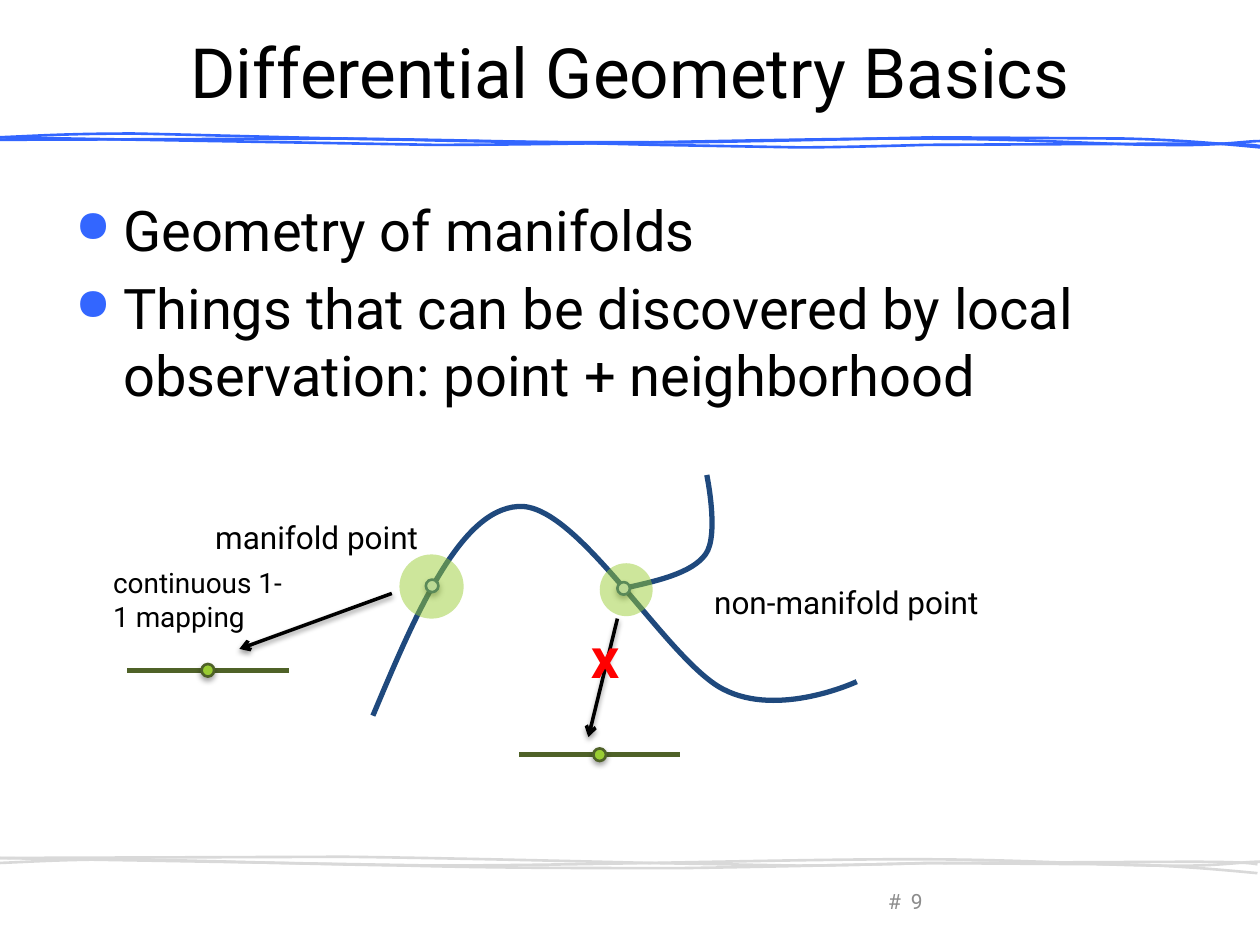
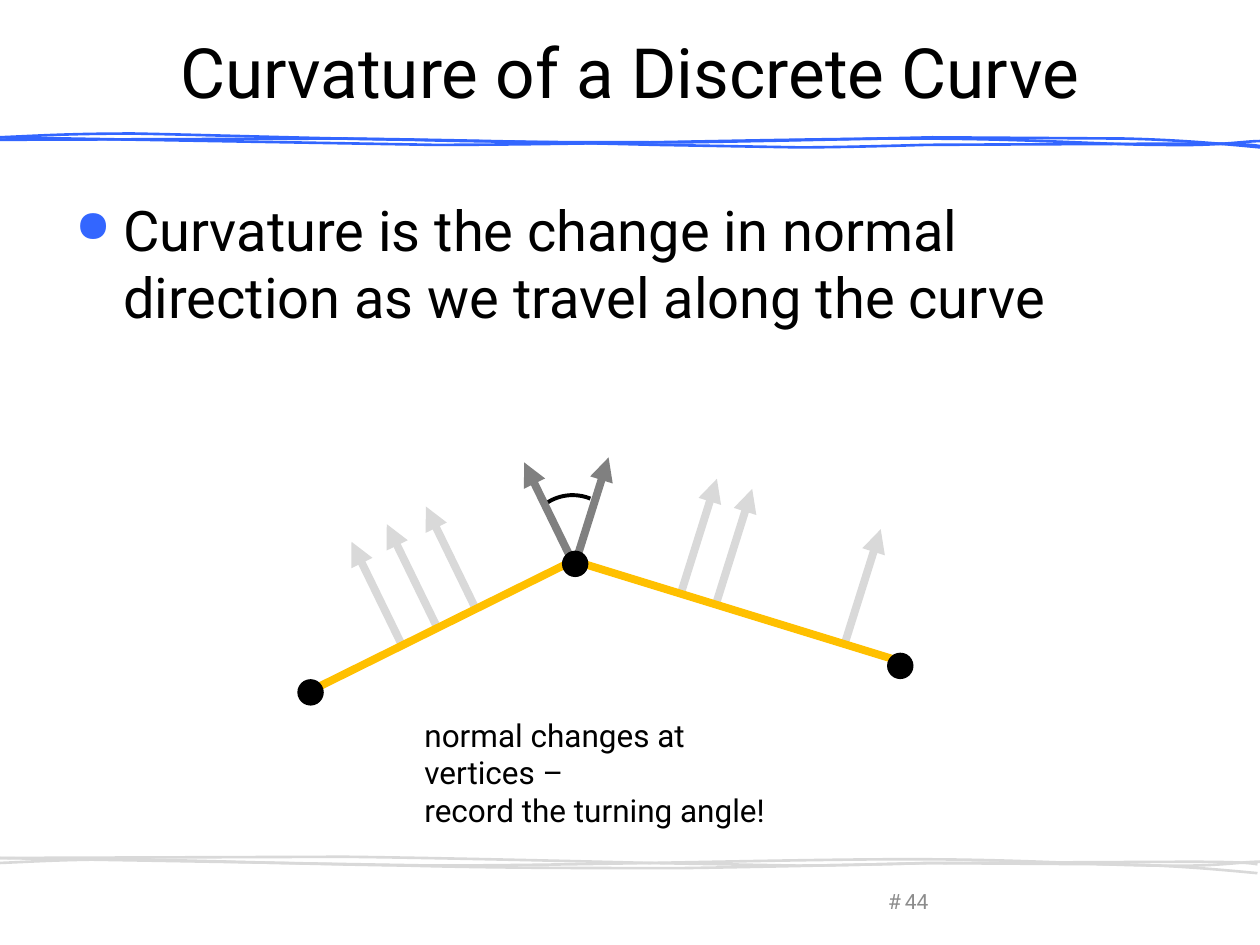
from dataclasses import dataclass

from lxml.etree import SubElement
from pptx import Presentation
from pptx.dml.color import RGBColor
from pptx.enum.shapes import MSO_CONNECTOR, MSO_SHAPE
from pptx.enum.text import MSO_ANCHOR, PP_ALIGN
from pptx.oxml.ns import qn
from pptx.util import Emu, Pt

PX = 9144  # EMU per px, 100 px to the inch
WIDE, HIGH = 1000, 750
OVAL, ARC = MSO_SHAPE.OVAL, MSO_SHAPE.ARC
STRAIGHT = MSO_CONNECTOR.STRAIGHT
TOP, MIDDLE = MSO_ANCHOR.TOP, MSO_ANCHOR.MIDDLE
LEFT, CENTER = PP_ALIGN.LEFT, PP_ALIGN.CENTER


@dataclass(frozen=True)
class Theme:
    font: str = "Roboto"
    ink: str = "000000"
    accent: str = "3366FF"
    pale: str = "D9D9D9"
    faint: str = "8C8C8C"
    gray: str = "808080"
    navy: str = "1F497D"
    ice: str = "DCE6F2"
    lime: str = "99CC33"
    moss: str = "4F6228"
    gold: str = "FFC000"
    red: str = "FF0000"
    title: float = 39.6
    body: int = 32
    label: int = 18
    small: int = 16
    foot: int = 12


# Strands of the wavy rule: drop to the footer, start, then lines (2) and curves (6)
WAVE = [
    (572, (-1, 109), [(344, 115), (465, 115, 627, 110, 723, 110),
                      (819, 110, 876, 115, 922, 115),
                      (968, 116, 987, 112, 1000, 112),
                      (1013, 111, 1006, 112, 999, 112)]),
    (576, (-1, 109), [(26, 108, 52, 106, 106, 106),
                      (161, 107, 252, 110, 325, 111),
                      (397, 113, 474, 113, 543, 113),
                      (612, 112, 740, 109, 740, 109), (892, 110),
                      (935, 111, 968, 114, 1000, 117)]),
    (570, (-2, 111), [(275, 110), (362, 111, 520, 115, 520, 115), (634, 117),
                      (670, 117, 735, 115, 735, 115), (943, 114),
                      (987, 114, 994, 115, 1000, 116)]),
]


def shift(nums, dx, dy):
    return tuple(n + (dy if i % 2 else dx) for i, n in enumerate(nums))


def pairs(nums):
    return list(zip(nums[::2], nums[1::2]))


def px(*nums):
    return [Emu(n * PX) for n in nums]


def put(thing, vals):
    for key, val in vals.items():
        setattr(thing, key, val)


def node(up, tag, **vals):
    return SubElement(up, qn("a:" + tag), {k: str(v) for k, v in vals.items()})


class Deck:
    def __init__(self, theme):
        self.theme = theme
        self.show = Presentation()
        put(self.show, {"slide_width": Emu(WIDE * PX),
                        "slide_height": Emu(HIGH * PX)})
        self.shapes = None

    # Shared slide frame
    def slide(self, title, points, number):
        t = self.theme
        page = self.show.slides.add_slide(self.show.slide_layouts[6])
        self.shapes = page.shapes
        for drop, start, parts in WAVE:
            self.curve(start, parts, t.accent, 1.5)
            self.curve(shift(start, -2, drop),
                       [shift(p, -2, drop) for p in parts], t.pale, 1.5)
        mid = {"align": CENTER, "anchor": MIDDLE}
        self.text("#", (695, 700, 30, 30), t.foot, t.faint, **mid)
        self.text(number, (695, 695, 65, 40), t.foot, t.faint, **mid)
        self.text(title, (50, 30, 900, 53), t.title, **mid)
        self.list(points)

    # Text
    def text(self, words, box, size, color=None, align=LEFT, anchor=TOP,
             bold=False):
        frame = self.shapes.add_textbox(*px(*box)).text_frame
        put(frame, {"word_wrap": True, "vertical_anchor": anchor})
        lines = [words] if isinstance(words, str) else words
        for i, line in enumerate(lines):
            para = frame.paragraphs[0] if i == 0 else frame.add_paragraph()
            put(para, {"text": line, "alignment": align})
            for run in para.runs:
                put(run.font, {"name": self.theme.font, "size": Pt(size),
                               "bold": bold})
                run.font.color.rgb = RGBColor.from_string(
                    color or self.theme.ink)
        return frame

    def list(self, points):
        t = self.theme
        frame = self.text(points, (50, 150, 900, 500), t.body)
        for para in frame.paragraphs:
            para.space_before = Pt(t.body * 0.2)
            props = para._p.get_or_add_pPr()
            props.set("marL", str(38 * PX))
            props.set("indent", str(-38 * PX))
            node(node(props, "buClr"), "srgbClr", val=t.accent)
            node(props, "buSzPct", val=80000)
            node(props, "buChar", char="●")

    # Lines and outlines
    def stroke(self, shape, color, width):
        shape.line.color.rgb = RGBColor.from_string(color)
        shape.line.width = Pt(width)

    def shade(self, effect, alpha):
        cast = node(effect, "outerShdw", blurRad=Pt(3.1), dist=Pt(1.8),
                    dir=90 * 60000, rotWithShape=0)
        node(node(cast, "srgbClr", val=self.theme.ink), "alpha",
             val=alpha * 1000)

    def line(self, start, end, color, width, head=None, shadow=0):
        link = self.shapes.add_connector(STRAIGHT, *px(*start, *end))
        self.stroke(link, color, width)
        props = link.element.spPr
        if head:
            node(props.find(qn("a:ln")), "tailEnd", type=head)
        effect = node(props, "effectLst")
        if shadow:
            self.shade(effect, shadow)

    def curve(self, start, parts, color, width):
        pen = self.shapes.build_freeform(*px(*start), scale=1)
        dots = [dot for part in parts for dot in pairs(part)]
        pen.add_line_segments([px(*dot) for dot in dots], close=False)
        shape = pen.convert_to_shape()
        shape.shadow.inherit = False
        shape.fill.background()
        self.stroke(shape, color, width)
        # Each run of three steps that makes a curve becomes one Bezier
        path = shape.element.find(".//" + qn("a:path"))
        steps = iter(list(path)[1:])
        for part in parts:
            group = [next(steps) for _ in pairs(part)]
            if len(group) == 3:
                bend = node(path, "cubicBezTo")
                group[0].addprevious(bend)
                for step in group:
                    bend.append(step[0])
                    path.remove(step)

    # Preset shapes
    def dot(self, mid, size, fill, edge=None, alpha=None, shadow=0):
        x, y = mid
        shape = self.shapes.add_shape(
            OVAL, *px(x - size // 2, y - size // 2, size, size))
        shape.shadow.inherit = False
        shape.fill.solid()
        shape.fill.fore_color.rgb = RGBColor.from_string(fill)
        props = shape.element.spPr
        if alpha:
            tint = props.find(qn("a:solidFill") + "/" + qn("a:srgbClr"))
            node(tint, "alpha", val=alpha * 1000)
        if edge:
            self.stroke(shape, edge, 1.5)
        else:
            shape.line.fill.background()
        if shadow:
            self.shade(props.find(qn("a:effectLst")), shadow)

    def arc(self, box, start, end, color, width):
        shape = self.shapes.add_shape(ARC, *px(*box))
        shape.shadow.inherit = False
        shape.fill.background()
        for i, angle in enumerate((start, end)):
            shape.adjustments[i] = angle * 0.6
        self.stroke(shape, color, width)


def basics(deck):
    t = deck.theme
    deck.slide("Differential Geometry Basics",
               ["Geometry of manifolds",
                "Things that can be discovered by local observation: "
                "point + neighborhood"], "9")

    # Curve with its branch
    deck.curve((296, 568), [(330, 487, 365, 405, 411, 402),
                            (458, 398, 529, 524, 574, 547),
                            (618, 570, 680, 541, 680, 541)], t.navy, 3)
    deck.curve((495, 467), [(522, 461, 549, 455, 560, 440),
                            (571, 425, 561, 377, 561, 377)], t.navy, 3)

    # Points, their neighborhoods and the flat pieces they map to
    for spot, lens, size, left, level, start, end in (
            ((343, 465), (342, 465), 51, 101, 532, (311, 471), (190, 515)),
            ((495, 467), (497, 468), 42, 412, 599, (490, 491), (467, 585))):
        deck.dot(spot, 10, t.ice, t.navy, shadow=35)
        deck.dot(lens, size, t.lime, alpha=49)
        deck.line((left, level), (left + 128, level), t.moss, 3)
        deck.dot((left + 64, level), 10, t.lime, t.moss, shadow=35)
        deck.line(start, end, t.ink, 2, "arrow", 38)

    # Labels
    deck.text("manifold point", (161, 406, 186, 40), t.label)
    deck.text("continuous 1-1 mapping", (80, 444, 154, 64), t.small)
    deck.text("non-manifold point", (557, 458, 236, 40), t.label)
    deck.text("x", (459, 489, 45, 64), t.body, t.red, bold=True)


def bend(deck):
    t = deck.theme
    deck.slide("Curvature of a Discrete Curve",
               ["Curvature is the change in normal direction as we travel "
                "along the curve"], "44")

    # Turning angle and normals: each side has one direction
    deck.arc((417, 393, 75, 75), 233, 292, t.ink, 2.25)
    sides = (((39, 80), (416, 367), [(279, 430), (307, 416), (338, 402)]),
             ((-28, 89), (483, 363), [(597, 388), (569, 380), (699, 420)]))
    for step, inner, tips in sides:
        for tip, color in [(inner, t.gray)] + [(tip, t.pale) for tip in tips]:
            deck.line(shift(tip, *step), tip, color, 4.5, "triangle")

    # Polyline with its vertices
    deck.curve((239, 552), [(455, 445), (715, 525)], t.gold, 4.5)
    for spot in ((246, 549), (456, 447), (714, 528)):
        deck.dot(spot, 21, t.ink)

    deck.text("normal changes at vertices –\vrecord the turning angle!",
              (327, 563, 319, 71), t.label)


def main():
    deck = Deck(Theme())
    basics(deck)
    bend(deck)
    deck.show.save("out.pptx")


if __name__ == "__main__":
    main()
